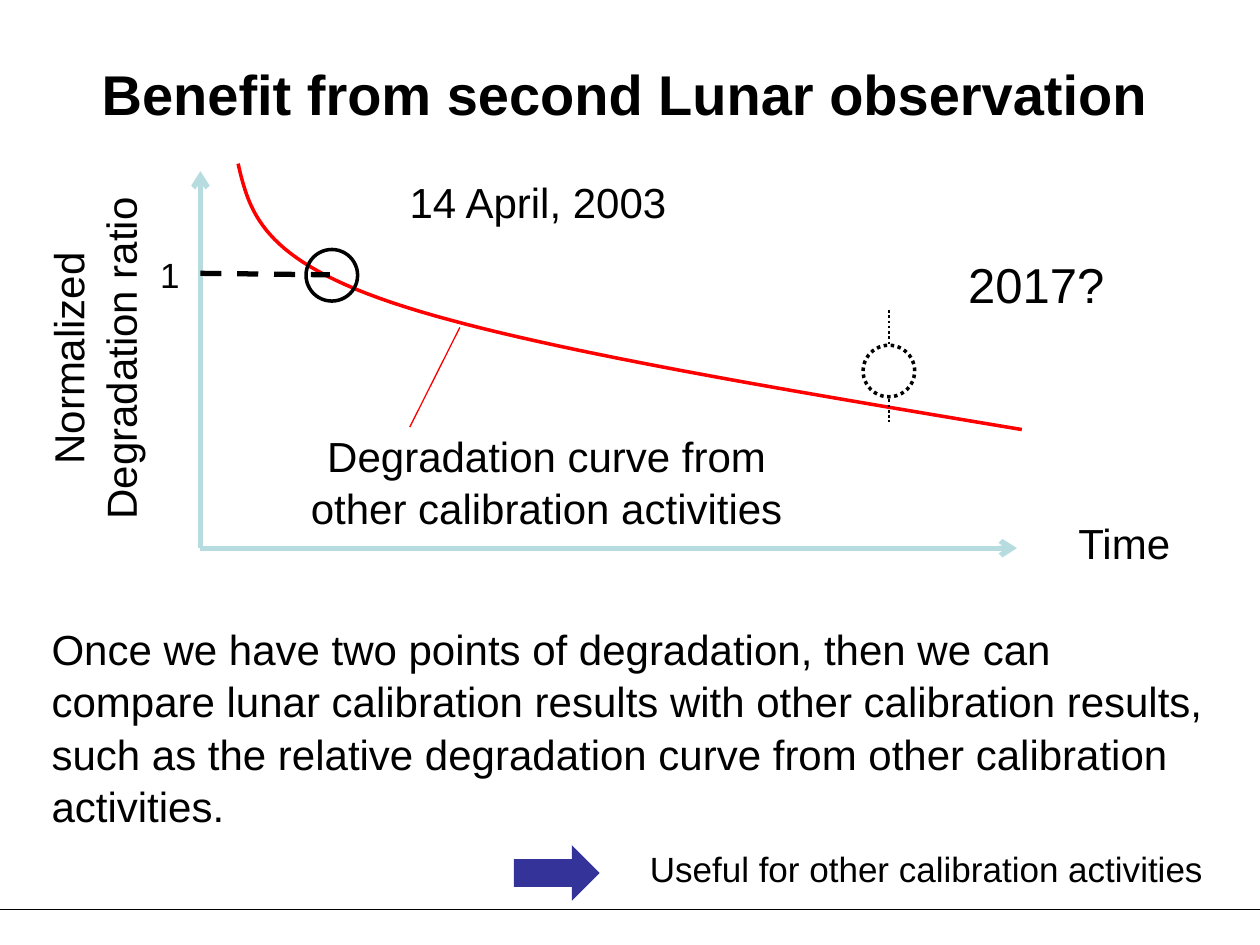
"""Build the slide on the benefit of a second lunar observation."""
import pptx
import pptx.dml.color
import pptx.enum.dml
import pptx.enum.shapes
import pptx.enum.text
import pptx.oxml
import pptx.util
from dataclasses import dataclass

Cm = pptx.util.Cm
Dash = pptx.enum.dml.MSO_LINE
Shape = pptx.enum.shapes.MSO_SHAPE
Align = pptx.enum.text.PP_ALIGN
Anchor = pptx.enum.text.MSO_ANCHOR


@dataclass(frozen=True)
class Theme:
    font: str = "Arial"
    title: int = 32
    question: int = 28
    body: int = 24
    small: int = 20
    leading: float = 1.04
    ink: str = "000000"
    paper: str = "FFFFFF"
    curve: str = "FF0000"
    axis: str = "B6DCDF"
    arrow: str = "333399"


THEME = Theme()

TITLE = ("Benefit from second Lunar observation", (1.17, 1.12, 22.86, 1.45))
AXIS_LABEL = ("Normalized\nDegradation ratio", (-3.35, 6.07, 10.39, 2.31))
CENTRED_LABELS = [
    ("2017?", (18.39, 4.95, 5, 1.45), THEME.question),
    ("Time", (20.9, 10.26, 3.53, 1.5), THEME.body),
    ("14 April, 2003", (7.16, 3.4, 7.37, 1.5), THEME.body),
    ("Degradation curve from other calibration activities", (5.94, 8.51, 10.16, 2.31), THEME.body),
    ("1", (2.74, 4.95, 1.37, 1.12), THEME.small),
]
STATEMENTS = [
    ("Once we have two points of degradation, then we can compare lunar calibration results "
     "with other calibration results, such as the relative degradation curve from other "
     "calibration activities.", (0.79, 12.4, 23.83, 4.37), THEME.body),
    ("Useful for other calibration activities", (12.85, 16.92, 11.76, 1.12), THEME.small),
]
BENEFIT_ARROW = (10.36, 17.04, 1.73, 1.12)

ORIGIN = (4.04, 11.05)
AXIS_ENDS = [(4.04, 3.45), (20.5, 11.05)]
CURVE_SPANS = [
    [(4.8, 3.3), (5.03, 4.27), (5.26, 5.21), (7.9, 6.1)],
    [(7.9, 6.1), (10.54, 6.99), (15.57, 7.82), (20.6, 8.66)],
]
CURVE_STEPS = 30
MARKER_SIZE = 1.04
FIRST_OBSERVATION = (6.69, 5.55)
SECOND_OBSERVATION = (17.92, 7.48)
FOOTER_RULE = ((0, 18.34), (25.4, 18.34))
LEADER = ((8.26, 8.61), (9.27, 6.6))
UNITY_LEVEL = ((4.04, 5.51), (6.65, 5.54))
SECOND_DATE = ((17.92, 6.25), (17.92, 8.51))


def rgb(value):
    return pptx.dml.color.RGBColor.from_string(value)


def style_line(line, colour, width, dash=None):
    line.color.rgb = rgb(colour)
    line.width = pptx.util.Pt(width)
    if dash:
        line.dash_style = dash


def add_text(slide, text, box, size, align=Align.CENTER, bold=False, anchor=Anchor.TOP):
    label = slide.shapes.add_textbox(*map(Cm, box))
    frame = label.text_frame
    frame.word_wrap = True
    frame.vertical_anchor = anchor
    frame.text = text
    for paragraph in frame.paragraphs:
        paragraph.alignment = align
        paragraph.line_spacing = THEME.leading
        font = paragraph.runs[0].font
        font.name, font.size, font.bold = THEME.font, pptx.util.Pt(size), bold
        font.color.rgb = rgb(THEME.ink)
    return label


def add_line(slide, ends, colour, width, dash=None, head=False):
    (x1, y1), (x2, y2) = ends
    straight = pptx.enum.shapes.MSO_CONNECTOR.STRAIGHT
    connector = slide.shapes.add_connector(straight, Cm(x1), Cm(y1), Cm(x2), Cm(y2))
    style_line(connector.line, colour, width, dash)
    namespace = pptx.oxml.ns.nsdecls("a")
    if head:
        connector.line._get_or_add_ln().append(
            pptx.oxml.parse_xml(f'<a:tailEnd {namespace} type="arrow"/>'))
    connector._element.spPr.append(pptx.oxml.parse_xml(f"<a:effectLst {namespace}/>"))


def add_marker(slide, centre, fill=None, dash=None):
    left, top = (value - MARKER_SIZE / 2 for value in centre)
    marker = slide.shapes.add_shape(
        Shape.OVAL, Cm(left), Cm(top), Cm(MARKER_SIZE), Cm(MARKER_SIZE))
    marker.shadow.inherit = False
    if fill:
        marker.fill.solid()
        marker.fill.fore_color.rgb = rgb(fill)
    else:
        marker.fill.background()
    style_line(marker.line, THEME.ink, 2, dash)


def bezier(span, t):
    weights = ((1 - t) ** 3, 3 * t * (1 - t) ** 2, 3 * t * t * (1 - t), t ** 3)
    return tuple(Cm(sum(w * p[axis] for w, p in zip(weights, span))) for axis in (0, 1))


def add_curve(slide):
    points = [bezier(span, step / CURVE_STEPS)
              for span in CURVE_SPANS for step in range(1, CURVE_STEPS + 1)]
    builder = slide.shapes.build_freeform(*bezier(CURVE_SPANS[0], 0))
    builder.add_line_segments(points, close=False)
    curve = builder.convert_to_shape()
    curve.shadow.inherit = False
    curve.fill.background()
    style_line(curve.line, THEME.curve, 2)


def add_benefit_arrow(slide):
    arrow = slide.shapes.add_shape(Shape.RIGHT_ARROW, *map(Cm, BENEFIT_ARROW))
    arrow.shadow.inherit = False
    arrow.fill.solid()
    arrow.fill.fore_color.rgb = rgb(THEME.arrow)
    arrow.line.fill.background()


def main():
    deck = pptx.Presentation()
    deck.slide_width, deck.slide_height = Cm(25.4), Cm(19.05)
    slide = deck.slides.add_slide(deck.slide_layouts[6])

    add_line(slide, FOOTER_RULE, THEME.ink, 0.75)
    for text, box, size in STATEMENTS:
        add_text(slide, text, box, size, Align.LEFT)
    add_benefit_arrow(slide)

    add_curve(slide)
    for end in AXIS_ENDS:
        add_line(slide, (ORIGIN, end), THEME.axis, 3, head=True)
    add_marker(slide, FIRST_OBSERVATION)
    for text, box, size in CENTRED_LABELS:
        add_text(slide, text, box, size)
    add_line(slide, LEADER, THEME.curve, 0.75)
    add_text(slide, *AXIS_LABEL, THEME.body).rotation = 270
    add_line(slide, UNITY_LEVEL, THEME.ink, 3, Dash.DASH)
    add_line(slide, SECOND_DATE, THEME.ink, 1.5, Dash.ROUND_DOT)
    add_marker(slide, SECOND_OBSERVATION, THEME.paper, Dash.ROUND_DOT)

    add_text(slide, *TITLE, THEME.title, bold=True, anchor=Anchor.MIDDLE)
    deck.save("out.pptx")


if __name__ == "__main__":
    main()
